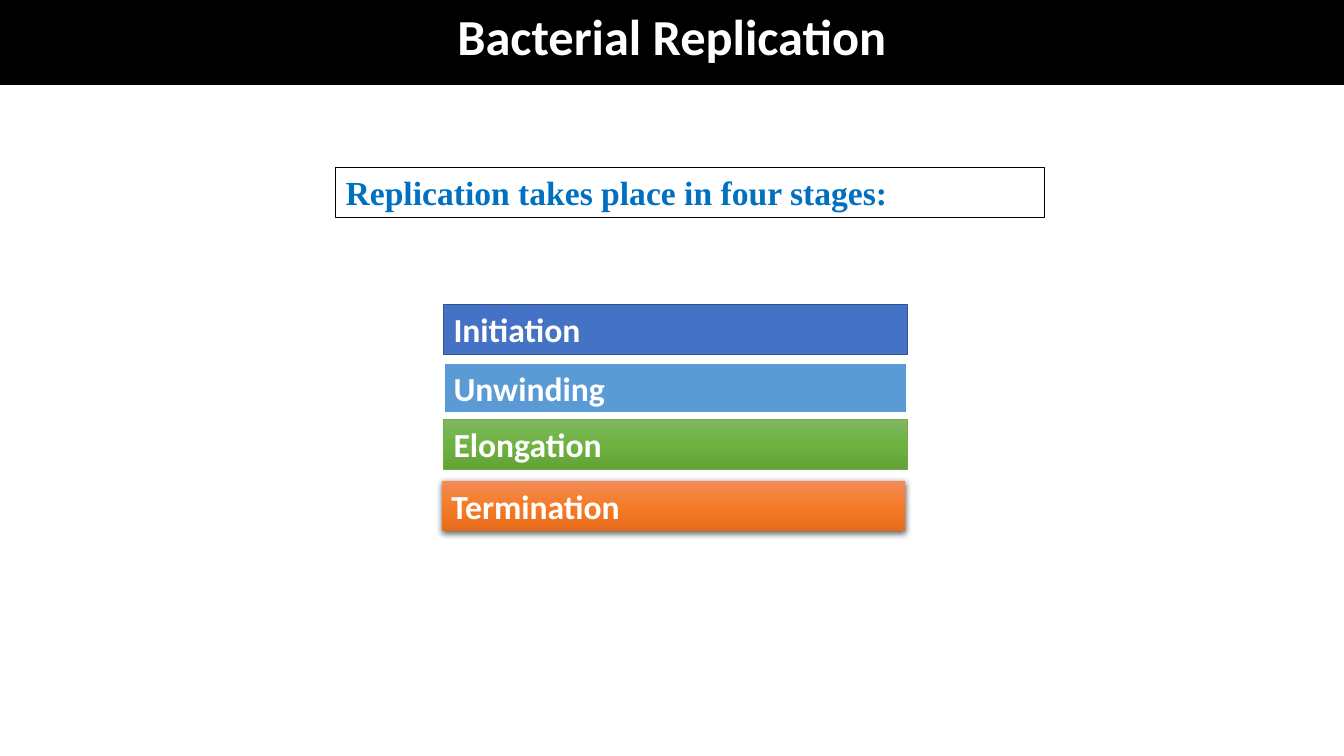
"""Build the slide on the four stages of bacterial replication."""
import copy
import dataclasses
import typing

import lxml.etree
import pptx
import pptx.dml.color
import pptx.enum.text
import pptx.enum.shapes
import pptx.oxml.ns
import pptx.shapes.autoshape
import pptx.slide
import pptx.util


@dataclasses.dataclass(frozen=True)
class Theme:
    """Colours, fonts and type sizes of the slide."""
    white: str = "FFFFFF"
    black: str = "000000"
    heading_blue: str = "0070C0"
    initiation: str = "4472C4"
    initiation_line: str = "325491"
    unwinding: str = "5B9BD5"
    elongation: tuple[str, ...] = ("81B861", "6FB242", "62A336")
    elongation_line: str = "70AD47"
    termination: tuple[str, ...] = ("F18C57", "F67B28", "E56C19")
    sans: str = "Calibri"
    serif: str = "Times New Roman"
    title_size: int = 36
    text_size: int = 24


THEME = Theme()


@dataclasses.dataclass(frozen=True)
class Box:
    """A text box: place in inches, one colour or a gradient, and text format."""
    text: str
    left: float
    top: float
    width: float
    height: float
    colors: tuple[str, ...]
    line_color: typing.Optional[str] = None
    line_width: float = 1
    text_color: str = THEME.white
    font: str = THEME.sans
    size: int = THEME.text_size
    alignment: pptx.enum.text.PP_ALIGN = pptx.enum.text.PP_ALIGN.LEFT
    shadow: bool = False


def stage(text: str, top: float, colors: tuple[str, ...], left: float = 4.4,
          **options: typing.Any) -> Box:
    """Describe one of the equally sized stage boxes."""
    return Box(text, left, top, 4.6, 0.5, colors, **options)


TITLE = Box("Bacterial Replication", 0, 0, 13.33, 0.71, (THEME.black,), THEME.black,
            size=THEME.title_size, alignment=pptx.enum.text.PP_ALIGN.CENTER)
BOXES = (
    Box("Replication takes place in four stages:", 3.33, 1.66, 7.03, 0.5, (THEME.white,),
        THEME.black, text_color=THEME.heading_blue, font=THEME.serif),
    stage("Initiation", 3.02, (THEME.initiation,), line_color=THEME.initiation_line),
    stage("Unwinding", 3.6, (THEME.unwinding,), line_color=THEME.white, line_width=1.5),
    stage("Elongation", 4.16, THEME.elongation, line_color=THEME.elongation_line,
          line_width=0.5),
    stage("Termination", 4.77, THEME.termination, left=4.38, shadow=True),
)


def rgb(color: str) -> pptx.dml.color.RGBColor:
    """Turn a hexadecimal string into a colour."""
    return pptx.dml.color.RGBColor.from_string(color)


def fill_shape(shape: pptx.shapes.autoshape.Shape, colors: tuple[str, ...]) -> None:
    """Fill with one colour, or with a top-to-bottom gradient of several."""
    if len(colors) == 1:
        shape.fill.solid()
        shape.fill.fore_color.rgb = rgb(colors[0])
        return
    shape.fill.gradient()
    shape.fill.gradient_angle = 270
    stop_list = shape.element.spPr.find(".//" + pptx.oxml.ns.qn("a:gsLst"))
    while len(stop_list) < len(colors):
        stop_list.append(copy.deepcopy(stop_list[0]))
    for index, (stop, color) in enumerate(zip(shape.fill.gradient_stops, colors)):
        stop.position = index / (len(colors) - 1)
        stop.color.rgb = rgb(color)


def add_shadow(shape: pptx.shapes.autoshape.Shape) -> None:
    """Add a soft shadow just below the shape."""
    qn = pptx.oxml.ns.qn
    effects = shape.element.spPr.find(qn("a:effectLst"))
    shadow = lxml.etree.SubElement(
        effects, qn("a:outerShdw"), blurRad=str(pptx.util.Pt(4.5)),
        dist=str(pptx.util.Pt(1.5)), dir="5400000", algn="ctr", rotWithShape="0")
    color = lxml.etree.SubElement(shadow, qn("a:srgbClr"), val=THEME.black)
    lxml.etree.SubElement(color, qn("a:alpha"), val="63000")


def format_box(shape: pptx.shapes.autoshape.Shape, box: Box) -> None:
    """Place a shape and give it the text and look of a box."""
    shape.left, shape.top = pptx.util.Inches(box.left), pptx.util.Inches(box.top)
    shape.width, shape.height = pptx.util.Inches(box.width), pptx.util.Inches(box.height)
    fill_shape(shape, box.colors)
    if box.line_color:
        shape.line.color.rgb = rgb(box.line_color)
        shape.line.width = pptx.util.Pt(box.line_width)
    else:
        shape.line.fill.background()
    shape.shadow.inherit = False
    if box.shadow:
        add_shadow(shape)
    frame = shape.text_frame
    frame.text = box.text
    frame.word_wrap = True
    frame.auto_size = pptx.enum.text.MSO_AUTO_SIZE.SHAPE_TO_FIT_TEXT
    frame.vertical_anchor = pptx.enum.text.MSO_ANCHOR.TOP
    paragraph = frame.paragraphs[0]
    paragraph.alignment = box.alignment
    font = paragraph.runs[0].font
    font.name, font.size, font.bold = box.font, pptx.util.Pt(box.size), True
    font.color.rgb = rgb(box.text_color)


def add_box(slide: pptx.slide.Slide, box: Box) -> None:
    """Draw one box on the slide."""
    shape = slide.shapes.add_shape(
        pptx.enum.shapes.MSO_SHAPE.RECTANGLE,
        pptx.util.Inches(box.left), pptx.util.Inches(box.top),
        pptx.util.Inches(box.width), pptx.util.Inches(box.height))
    format_box(shape, box)


def main() -> None:
    """Build and save the presentation."""
    presentation = pptx.Presentation()
    presentation.slide_width = pptx.util.Inches(13.33)
    presentation.slide_height = pptx.util.Inches(7.5)
    slide = presentation.slides.add_slide(
        presentation.slide_layouts.get_by_name("Title Only"))
    format_box(slide.shapes.title, TITLE)
    for box in BOXES:
        add_box(slide, box)
    presentation.save("out.pptx")


if __name__ == "__main__":
    main()
